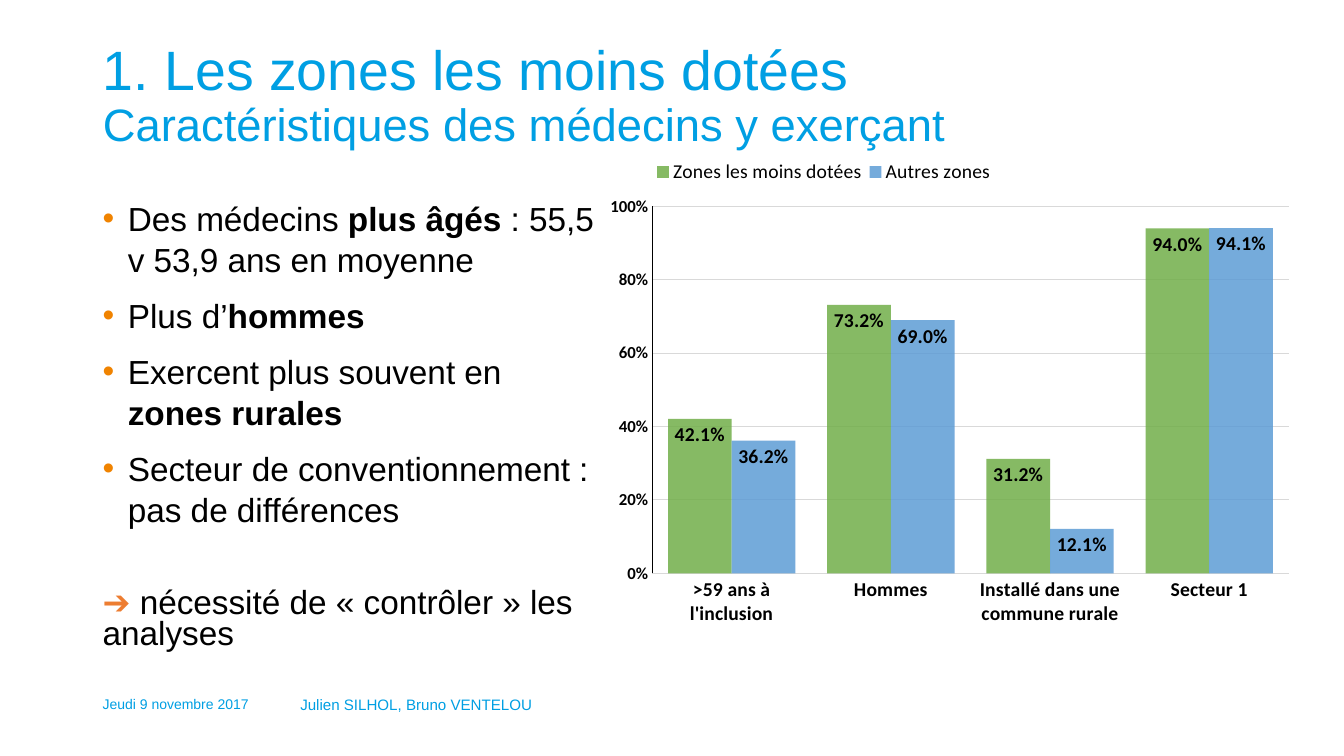
from lxml.etree import SubElement
from pptx import Presentation
from pptx.chart.data import CategoryChartData
from pptx.dml.color import RGBColor
from pptx.enum.chart import XL_CHART_TYPE, XL_LABEL_POSITION, XL_LEGEND_POSITION, XL_TICK_MARK
from pptx.enum.text import MSO_ANCHOR, MSO_AUTO_SIZE, PP_ALIGN
from pptx.oxml import parse_xml
from pptx.oxml.ns import nsdecls, qn
from pptx.util import Inches, Pt

# Content
BLUE, BLACK, ORANGE, ARROW, GREY = "009FE3", "000000", "F08300", "ED7D31", "D9D9D9"
TITLE = [("1. Les zones les moins dotées", 39.6), ("Caractéristiques des médecins y exerçant", 32.4)]
BULLETS = [  # runs of (text, bold)
    [("Des médecins ", False), ("plus âgés ", True), (": 55,5 v 53,9 ans en moyenne", False)],
    [("Plus d’", False), ("hommes", True)],
    [("Exercent plus souvent en ", False), ("zones rurales", True)],
    [("Secteur de conventionnement : pas de différences", False)],
]
CONCLUSION = [("➔", ARROW), (" nécessité de «\u00a0contrôler\u00a0» les analyses", BLACK)]
FOOTERS = [  # text, box, size, line spacing
    ("Jeudi 9 novembre 2017", (0.92, 6.78, 1.92, 0.43), 10, 0.9),
    ("Julien SILHOL, Bruno VENTELOU", (2.88, 6.82, 2.64, 0.38), 10.8, 0.7),
]
CATEGORIES = [">59 ans à l'inclusion", "Hommes", "Installé dans une commune rurale", "Secteur 1"]
SERIES = [
    ("Zones les moins dotées", "70AD47", (0.421, 0.732, 0.312, 0.94)),
    ("Autres zones", "5B9BD5", (0.362, 0.69, 0.121, 0.941)),
]
PLOT_LAYOUT = (0.094, 0.109, 0.876, 0.737)
LEGEND_LAYOUT = (0.09, 0.01, 0.48, 0.06)


def style(font, size, color=BLACK, bold=False, name="Arial"):
    font.name, font.size, font.bold = name, Pt(size), bold
    font.color.rgb = RGBColor.from_string(color)


def add_run(paragraph, text, size, color=BLACK, bold=False):
    run = paragraph.add_run()
    run.text = text
    style(run.font, size, color, bold)


def set_frame(shape, anchor):
    frame = shape.text_frame
    frame.word_wrap = True
    frame.auto_size = MSO_AUTO_SIZE.NONE
    frame.vertical_anchor = anchor
    return frame


def add_text_box(slide, box, anchor):
    return set_frame(slide.shapes.add_textbox(*map(Inches, box)), anchor)


def add_bullet(paragraph):
    properties = paragraph._p.get_or_add_pPr()
    properties.set("marL", str(Inches(0.25)))
    properties.set("indent", str(-Inches(0.25)))
    color = SubElement(SubElement(properties, qn("a:buClr")), qn("a:srgbClr"))
    color.set("val", ORANGE)
    SubElement(properties, qn("a:buFont")).set("typeface", "Arial")
    SubElement(properties, qn("a:buChar")).set("char", "•")


def manual_layout(box, inner=False):
    target = '<c:layoutTarget val="inner"/>' if inner else ""
    modes = "".join(f'<c:{key}Mode val="edge"/>' for key in "xy")
    sizes = "".join(f'<c:{key} val="{value}"/>' for key, value in zip("xywh", box))
    return parse_xml(f'<c:layout {nsdecls("c")}><c:manualLayout>{target}{modes}{sizes}'
                     '</c:manualLayout></c:layout>')


def set_line(line, color):
    line.color.rgb = RGBColor.from_string(color)
    line.width = Pt(0.75)


def format_axis(axis, size, color):
    axis.major_tick_mark = axis.minor_tick_mark = XL_TICK_MARK.NONE
    style(axis.tick_labels.font, size, bold=True, name="Calibri")
    set_line(axis.format.line, color)


def add_zone_chart(slide):
    data = CategoryChartData()
    data.categories = CATEGORIES
    for name, _, values in SERIES:
        data.add_series(name, values)
    chart = slide.shapes.add_chart(XL_CHART_TYPE.COLUMN_CLUSTERED,
                                   *map(Inches, (5.79, 1.51, 7.21, 4.94)), data).chart
    chart.has_title = False
    style(chart.font, 10, name="Calibri")

    # Axes
    format_axis(chart.category_axis, 14, GREY)
    axis = chart.value_axis
    format_axis(axis, 12, BLACK)
    axis.minimum_scale, axis.maximum_scale, axis.major_unit = 0, 1, 0.2
    axis.tick_labels.number_format = "0%"
    axis.tick_labels.number_format_is_linked = False
    set_line(axis.major_gridlines.format.line, GREY)

    # Columns and their labels
    plot = chart.plots[0]
    plot.gap_width, plot.overlap, plot.vary_by_categories = 50, 0, False
    for series, (_, color, _) in zip(plot.series, SERIES):
        series.format.fill.solid()
        series.format.fill.fore_color.rgb = RGBColor.from_string(color)
        fill_color = series.format.fill._xPr.find(".//" + qn("a:srgbClr"))
        SubElement(fill_color, qn("a:alpha")).set("val", "84000")
        labels = series.data_labels
        labels.show_value = True
        labels.position = XL_LABEL_POSITION.INSIDE_END
        labels.number_format, labels.number_format_is_linked = "0.0%", False
        style(labels.font, 14, bold=True, name="Calibri")

    # Legend above the plot
    chart.has_legend = True
    legend = chart.legend
    legend.position = XL_LEGEND_POSITION.BOTTOM
    legend.include_in_layout = False
    style(legend.font, 14, name="Calibri")
    for old in legend._element.findall(qn("c:layout")):
        legend._element.remove(old)
    legend._element.find(qn("c:legendPos")).addnext(manual_layout(LEGEND_LAYOUT))
    plot_area = chart._chartSpace.chart.plotArea
    for old in plot_area.findall(qn("c:layout")):
        plot_area.remove(old)
    plot_area.insert(0, manual_layout(PLOT_LAYOUT, inner=True))


def main():
    presentation = Presentation()
    presentation.slide_width, presentation.slide_height = Inches(13.33), Inches(7.5)
    slide = presentation.slides.add_slide(presentation.slide_layouts[5])

    # Title
    title = slide.shapes.title
    title.left, title.top, title.width, title.height = map(Inches, (0.92, 0.4, 11.5, 1.13))
    paragraph = set_frame(title, MSO_ANCHOR.MIDDLE).paragraphs[0]
    paragraph.alignment, paragraph.line_spacing = PP_ALIGN.LEFT, 0.9
    for index, (text, size) in enumerate(TITLE):
        if index:
            paragraph.add_line_break()
        add_run(paragraph, text, size, BLUE)

    # Bullets and conclusion
    frame = add_text_box(slide, (0.92, 1.9, 5.1, 4.84), MSO_ANCHOR.TOP)
    for index, runs in enumerate(BULLETS):
        paragraph = frame.add_paragraph() if index else frame.paragraphs[0]
        add_bullet(paragraph)
        paragraph.line_spacing = 1.04
        paragraph.space_before = Pt(10 if index else 0)
        for text, bold in runs:
            add_run(paragraph, text, 23.8, bold=bold)
    paragraph = frame.add_paragraph()
    paragraph.line_spacing, paragraph.space_before = 0.8, Pt(42)
    for text, color in CONCLUSION:
        add_run(paragraph, text, 23.8, color)

    # Chart
    add_zone_chart(slide)

    # Footers
    for text, box, size, spacing in FOOTERS:
        paragraph = add_text_box(slide, box, MSO_ANCHOR.MIDDLE).paragraphs[0]
        paragraph.line_spacing = spacing
        add_run(paragraph, text, size, BLUE)

    presentation.save("out.pptx")


if __name__ == "__main__":
    main()
